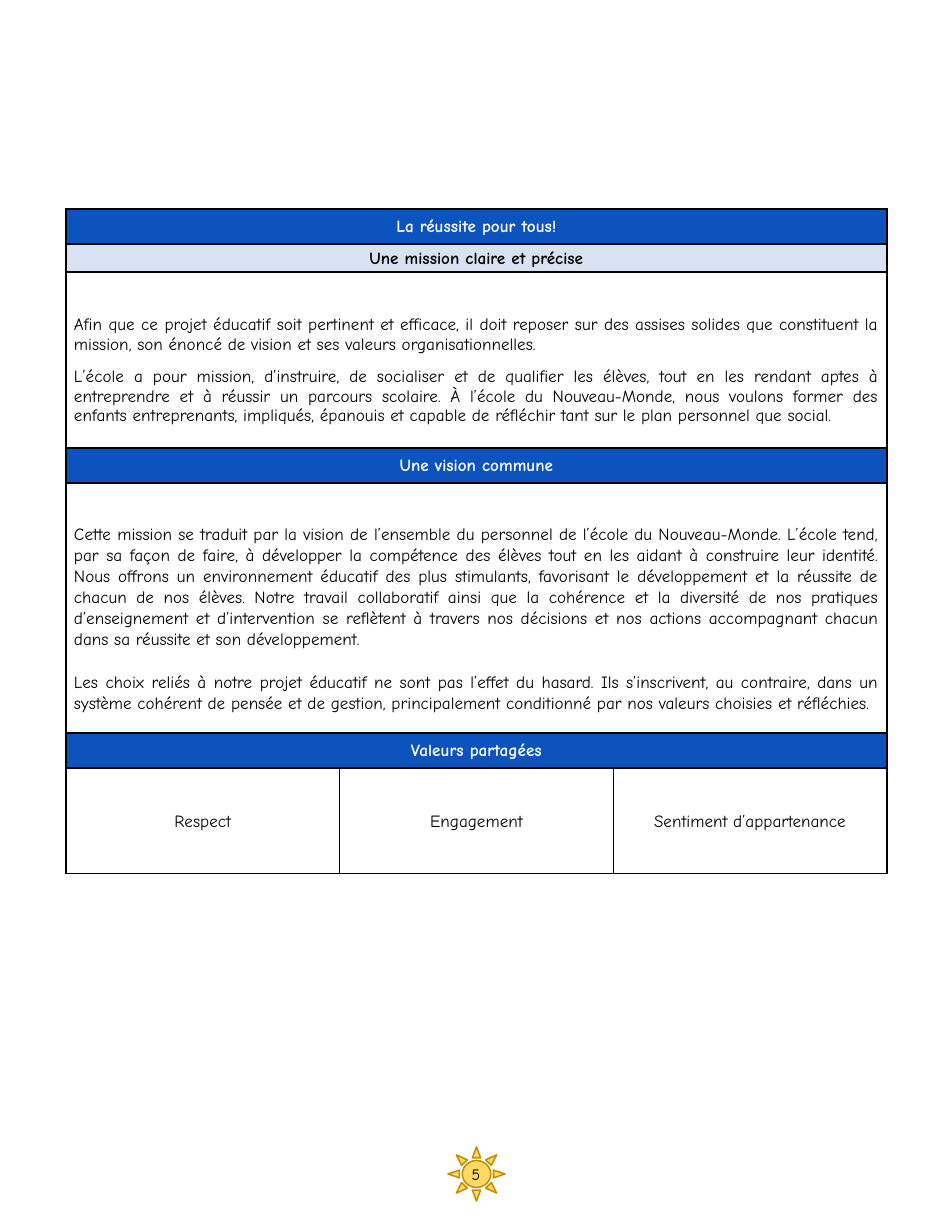
from lxml.etree import SubElement
from pptx import Presentation
from pptx.dml.color import RGBColor
from pptx.enum.shapes import MSO_SHAPE
from pptx.enum.text import MSO_ANCHOR, PP_ALIGN
from pptx.oxml.ns import qn
from pptx.util import Pt

EMU_PER_PX = 914400 / 112
FONT = "Comic Neue"
BLUE, PALE_BLUE, BLACK, WHITE = "0D53BD", "D9E2F3", "000000", "FFFFFF"


def px(length):
    return round(length * EMU_PER_PX)


def color(hex_value):
    return RGBColor.from_string(hex_value)


prs = Presentation()
prs.slide_width, prs.slide_height = px(952), px(1232)
slide = prs.slides.add_slide(prs.slide_layouts[6])

# Page number on a sun
sun = slide.shapes.add_shape(MSO_SHAPE.SUN, px(448), px(1147), px(57), px(54))
sun.shadow.inherit = False
sun.fill.solid()
sun.fill.fore_color.rgb = color("FFD966")
sun.line.color.rgb = color("BF9000")
sun.line.width = Pt(1)

page_number = slide.shapes.add_textbox(px(369), px(1141), px(214), px(66))
page_number.text_frame.word_wrap = True
page_number.text_frame.vertical_anchor = MSO_ANCHOR.MIDDLE
page_number.text_frame.text = "5"
number_line = page_number.text_frame.paragraphs[0]
number_line.alignment = PP_ALIGN.CENTER
number_font = number_line.runs[0].font
number_font.name, number_font.size = FONT, Pt(10.2)
number_font.color.rgb = color(BLACK)

mission = [
    "Afin que ce projet éducatif soit pertinent et efficace, il doit reposer sur des assises "
    "solides que constituent la mission, son énoncé de vision et ses valeurs organisationnelles.",
    "L’école a pour mission, d’instruire, de socialiser et de qualifier les élèves, tout en les "
    "rendant aptes à entreprendre et à réussir un parcours scolaire. À l’école du Nouveau-Monde, "
    "nous voulons former des enfants entreprenants, impliqués, épanouis et capable de réfléchir "
    "tant sur le plan personnel que social.",
]
vision = [
    "Cette mission se traduit par la vision de l’ensemble du personnel de l’école du "
    "Nouveau-Monde. L’école tend, par sa façon de faire, à développer la compétence des élèves "
    "tout en les aidant à construire leur identité. Nous offrons un environnement éducatif des "
    "plus stimulants, favorisant le développement et la réussite de chacun de nos élèves. Notre "
    "travail collaboratif ainsi que la cohérence et la diversité de nos pratiques "
    "d’enseignement et d’intervention se reflètent à travers nos décisions et nos actions "
    "accompagnant chacun dans sa réussite et son développement.",
    "Les choix reliés à notre projet éducatif ne sont pas l’effet du hasard. Ils s’inscrivent, "
    "au contraire, dans un système cohérent de pensée et de gestion, principalement conditionné "
    "par nos valeurs choisies et réfléchies.",
]
values = ["Respect", "Engagement", "Sentiment d’appartenance"]

# height, cell texts, fill, text colour, line spacing, gap between paragraphs
rows = [
    (35, ["La réussite pour tous!"], BLUE, WHITE, 1.07, 0),
    (28, ["Une mission claire et précise"], PALE_BLUE, BLACK, 1.07, 0),
    (176, ["\n".join(mission)], None, BLACK, 1.0, 8),
    (35, ["Une vision commune"], BLUE, WHITE, 1.07, 0),
    (250, ["\n".join(vision)], None, BLACK, 1.07, 13.6),
    (35, ["Valeurs partagées"], BLUE, WHITE, 1.07, 0),
    (106, values, None, BLACK, 1.07, 0),
]

total_height = sum(row[0] for row in rows)
project = slide.shapes.add_table(
    len(rows), len(values), px(66), px(209), px(821), px(total_height)
).table
project.first_row = project.horz_banding = False
for column in project.columns:
    column.width = px(821 / len(values))

for row_index, (height, texts, fill, text_color, spacing, gap) in enumerate(rows):
    project.rows[row_index].height = px(height)
    cells = list(project.rows[row_index].cells)
    if len(texts) == 1:
        cells[0].merge(cells[-1])

    for cell in cells:
        properties = cell._tc.get_or_add_tcPr()
        for side in ("a:lnL", "a:lnR", "a:lnT", "a:lnB"):
            border = SubElement(properties, qn(side), w=str(Pt(1)))
            SubElement(SubElement(border, qn("a:solidFill")), qn("a:srgbClr"), val=BLACK)
        if fill:
            cell.fill.solid()
            cell.fill.fore_color.rgb = color(fill)
        else:
            cell.fill.background()

    for cell, text in zip(cells, texts):
        cell.vertical_anchor = MSO_ANCHOR.MIDDLE
        cell.margin_left = cell.margin_right = px(8)
        cell.margin_top = px(21 if gap else 0)
        cell.margin_bottom = 0
        cell.text_frame.text = text
        for index, paragraph in enumerate(cell.text_frame.paragraphs):
            paragraph.alignment = PP_ALIGN.JUSTIFY if gap else PP_ALIGN.CENTER
            paragraph.line_spacing = spacing
            if index:
                paragraph.space_before = Pt(gap)
            font = paragraph.runs[0].font
            font.name, font.size = FONT, Pt(11)
            font.bold = fill is not None
            font.color.rgb = color(text_color)

prs.save("out.pptx")
